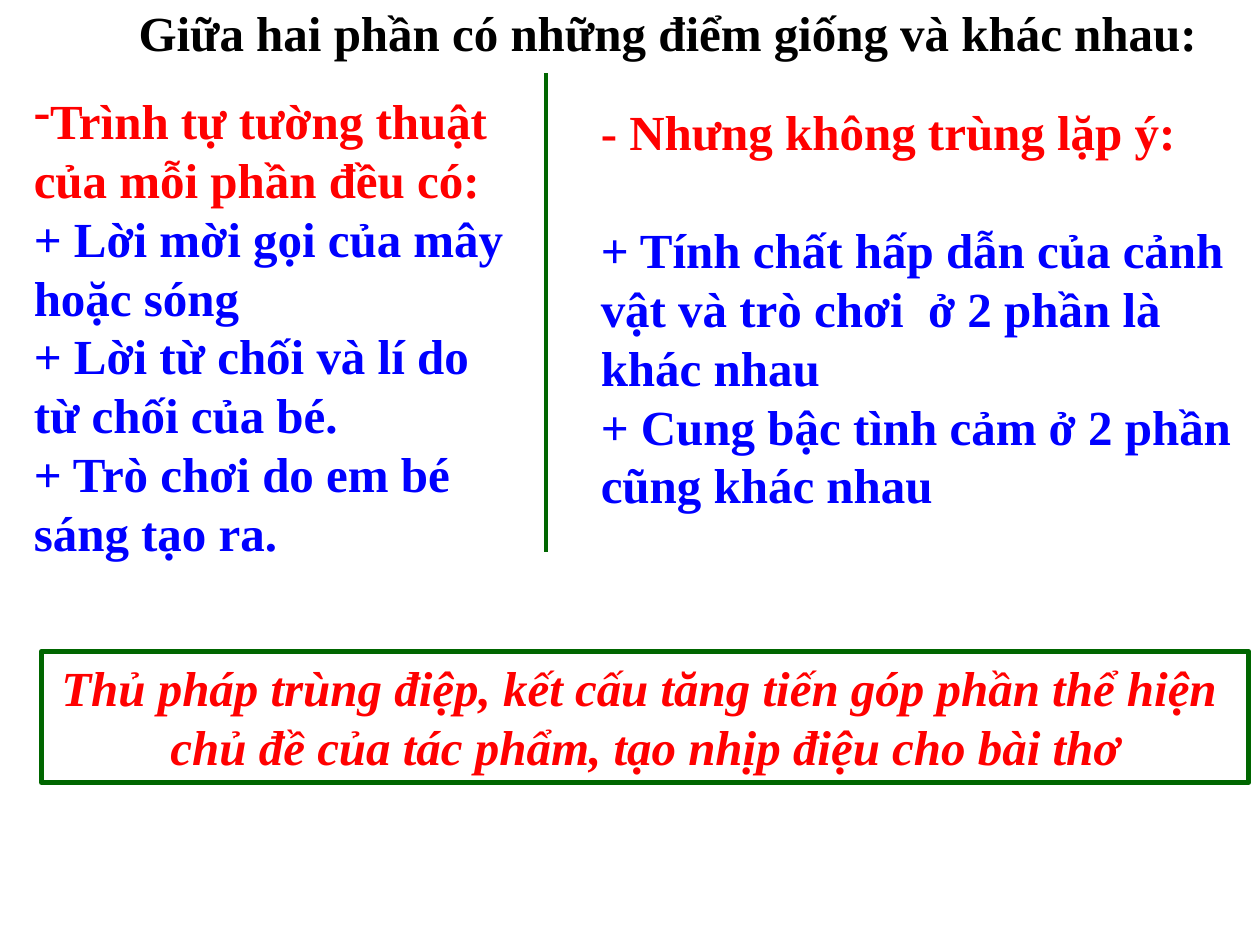
import pptx
import pptx.util
import pptx.dml.color
import pptx.enum.shapes
import pptx.enum.text
import pptx.oxml.xmlchemy
from dataclasses import dataclass
from lxml import etree
from pptx.oxml import ns

Inches = pptx.util.Inches
Pt = pptx.util.Pt
RGB = pptx.dml.color.RGBColor.from_string
ALIGN = pptx.enum.text.PP_ALIGN


@dataclass(frozen=True)
class Theme:
    font: str = "Times New Roman"
    size: int = 28
    title: str = "000000"
    heading: str = "FF0000"
    point: str = "0000FF"
    rule: str = "006600"
    divider_width: float = 2.25
    border_width: float = 3


THEME = Theme()


def set_attributes(target, values):
    for name, value in values.items():
        setattr(target, name, value)


def place(shape, box):
    names = ("left", "top", "width", "height")
    set_attributes(shape, dict(zip(names, map(Inches, box))))


def write_paragraphs(text_frame, lines, align=ALIGN.LEFT, wrap=True, italic=False):
    set_attributes(text_frame, {
        "word_wrap": wrap,
        "auto_size": pptx.enum.text.MSO_AUTO_SIZE.NONE,
        "vertical_anchor": pptx.enum.text.MSO_ANCHOR.TOP,
    })
    for index, (text, color) in enumerate(lines):
        paragraph = text_frame.add_paragraph() if index else text_frame.paragraphs[0]
        paragraph.alignment = align
        run = paragraph.add_run()
        run.text = text
        set_attributes(run.font, {
            "name": THEME.font, "size": Pt(THEME.size), "bold": True, "italic": italic,
        })
        run.font.color.rgb = RGB(color)
    return text_frame.paragraphs


def add_dash_bullet(paragraph):
    properties = paragraph._p.get_or_add_pPr()
    properties.set("marL", "0")
    properties.set("indent", "0")
    etree.SubElement(properties, ns.qn("a:buFontTx"))
    etree.SubElement(properties, ns.qn("a:buChar")).set("char", "-")


def add_title(slide, box, text):
    title = slide.shapes.title
    place(title, box)
    write_paragraphs(title.text_frame, [(text, THEME.title)])


def add_column(slide, box, heading, points):
    column = slide.shapes.add_textbox(*map(Inches, box))
    lines = [(heading, THEME.heading)] + [(point, THEME.point) for point in points]
    return write_paragraphs(column.text_frame, lines)


def add_divider(slide, x, top, bottom):
    divider = slide.shapes.add_connector(
        pptx.enum.shapes.MSO_CONNECTOR.STRAIGHT,
        Inches(x), Inches(top), Inches(x), Inches(bottom))
    divider.line.color.rgb = RGB(THEME.rule)
    divider.line.width = Pt(THEME.divider_width)
    etree.SubElement(divider._element.spPr, ns.qn("a:effectLst"))


def add_conclusion(slide, box, lines):
    conclusion = slide.shapes.add_shape(
        pptx.enum.shapes.MSO_SHAPE.RECTANGLE, *map(Inches, box))
    conclusion.shadow.inherit = False
    conclusion.fill.background()
    conclusion.line.color.rgb = RGB(THEME.rule)
    conclusion.line.width = Pt(THEME.border_width)
    write_paragraphs(conclusion.text_frame, [(line, THEME.heading) for line in lines],
                     align=ALIGN.CENTER, wrap=False, italic=True)


def build_comparison(slide):
    add_divider(slide, 4.33, 0.58, 4.38)
    similarities = add_column(
        slide, (0.17, 0.67, 4, 3.87),
        "Trình tự tường thuật của mỗi phần đều có:",
        ["+ Lời mời gọi của mây hoặc sóng",
         "+ Lời từ chối và lí do từ chối của bé.",
         "+ Trò chơi do em bé",
         "sáng tạo ra."])
    add_dash_bullet(similarities[0])
    differences = add_column(
        slide, (4.67, 0.76, 5.33, 3.4),
        "- Nhưng không trùng lặp ý:",
        ["+ Tính chất hấp dẫn của cảnh vật và trò chơi  ở 2 phần là khác nhau",
         "+ Cung bậc tình cảm ở 2 phần cũng khác nhau"])
    differences[0].space_after = Pt(THEME.size * 1.2)


def main():
    presentation = pptx.Presentation()
    set_attributes(presentation, {"slide_width": Inches(10), "slide_height": Inches(7.5)})
    slide = presentation.slides.add_slide(presentation.slide_layouts[5])
    build_comparison(slide)
    add_title(slide, (1, -0.03, 8.67, 0.57),
              "Giữa hai phần có những điểm giống và khác nhau:")
    add_conclusion(slide, (0.33, 5.17, 9.58, 1.04),
                   ["Thủ pháp trùng điệp, kết cấu tăng tiến góp phần thể hiện ",
                    "chủ đề của tác phẩm, tạo nhịp điệu cho bài thơ"])
    presentation.save("out.pptx")


if __name__ == "__main__":
    main()
